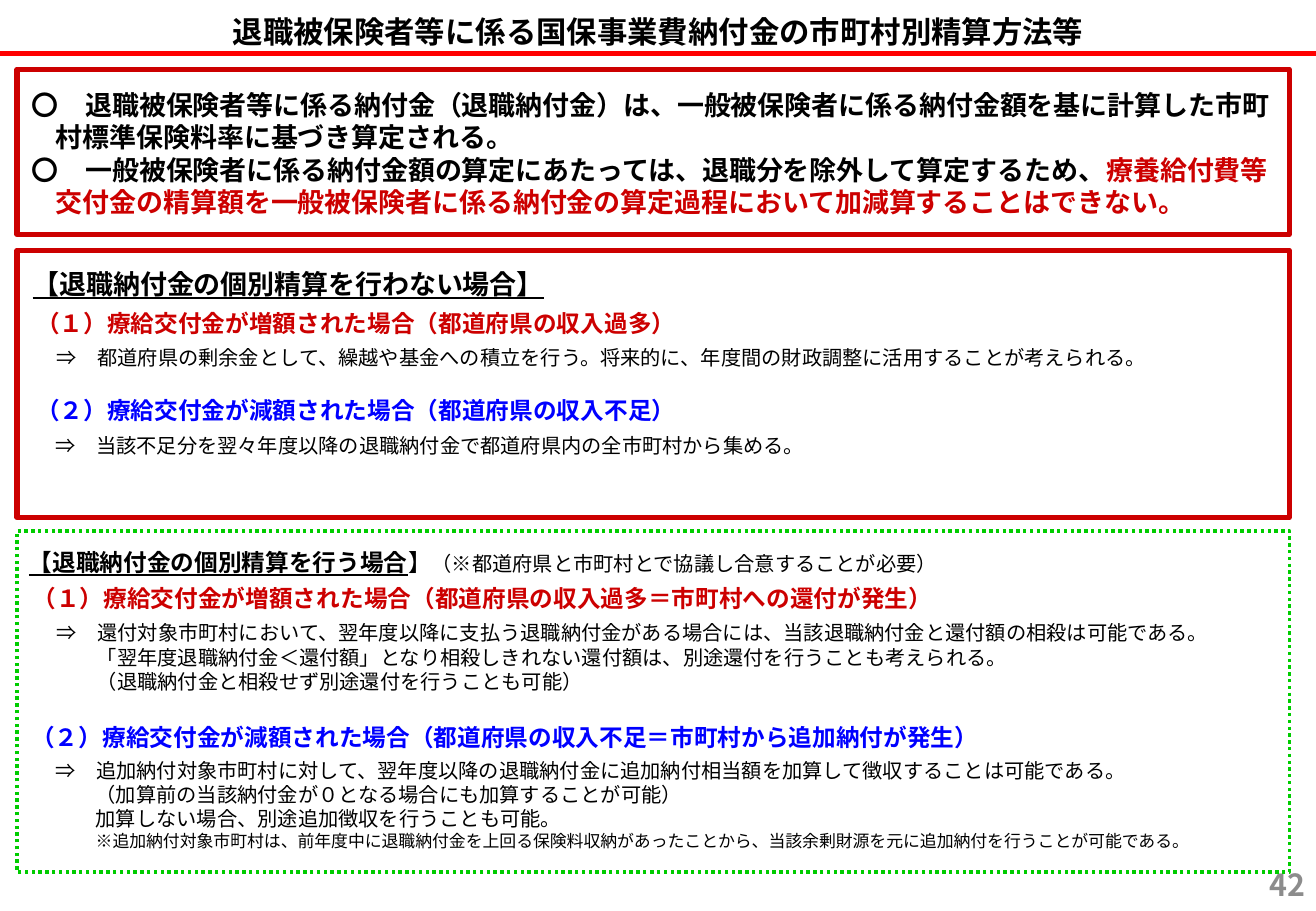
from dataclasses import dataclass

from lxml.etree import SubElement
from pptx import Presentation
from pptx.dml.color import RGBColor
from pptx.enum.dml import MSO_LINE
from pptx.enum.lang import MSO_LANGUAGE_ID as Language
from pptx.enum.shapes import MSO_CONNECTOR, MSO_SHAPE
from pptx.enum.text import MSO_ANCHOR as Anchor, MSO_AUTO_SIZE, PP_ALIGN as Align
from pptx.oxml.ns import qn
from pptx.util import Inches, Pt


@dataclass(frozen=True)
class Theme:
    font: str = "Noto Sans CJK JP"
    black: str = "000000"
    crimson: str = "CC0000"
    blue: str = "0000FF"
    green: str = "00CC00"
    red: str = "FF0000"
    gray: str = "8C8C8C"
    title: int = 18
    lead: int = 16
    heading: int = 14
    body: int = 12
    note: int = 10


THEME = Theme()
RED_HEAD = dict(size=THEME.heading, color=THEME.crimson, bold=True)
BLUE_HEAD = dict(size=THEME.heading, color=THEME.blue, bold=True)

# A paragraph is a list of (text, format) runs.
TITLE = [[("退職被保険者等に係る国保事業費納付金の市町村別精算方法等", dict(size=THEME.title, bold=True))]]
PAGE_NUMBER = [[("42", dict(size=THEME.title, color=THEME.gray, bold=True))]]

LEAD = [
    [("〇　退職被保険者等に係る納付金（退職納付金）は、一般被保険者に係る納付金額を基に計算した"
      "市町村標準保険料率に基づき算定される。", dict(size=THEME.lead, bold=True))],
    [("〇　一般被保険者に係る納付金額の算定にあたっては、退職分を除外して算定するため、",
      dict(size=THEME.lead, bold=True)),
     ("療養給付費等交付金の精算額を一般被保険者に係る納付金の算定過程において加減算することはできない。",
      dict(size=THEME.lead, bold=True, color=THEME.crimson))],
]

# (left, top, width, height), paragraphs
HEADINGS = [
    ((0.17, 2.15, 10.36, 0.37),
     [[("【退職納付金の個別精算を行わない場合】", dict(size=THEME.lead, bold=True, underline=True))]]),
    ((0.2, 2.49, 9.71, 0.34), [[("（１）療給交付金が増額された場合（都道府県の収入過多）", RED_HEAD)]]),
    ((0.2, 3.21, 9.71, 0.34), [[("（２）療給交付金が減額された場合（都道府県の収入不足）", BLUE_HEAD)]]),
    ((0.14, 4.46, 10.36, 0.34),
     [[("【退職納付金の個別精算を行う場合", dict(size=THEME.heading, bold=True, underline=True)),
       ("】", dict(size=THEME.heading)),
       ("（※都道府県と市町村とで協議し合意することが必要）", {})]]),
    ((0.17, 4.76, 9.71, 0.34),
     [[("（１）療給交付金が増額された場合（都道府県の収入過多＝市町村への還付が発生）", RED_HEAD)]]),
    ((0.16, 5.9, 9.74, 0.34),
     [[("（２）療給交付金が減額された場合（都道府県の収入不足＝市町村から追加納付が発生）", BLUE_HEAD)]]),
]

# The first line hangs its arrow; the others align with the text after it.
EXPLANATIONS = [
    ((0.37, 2.79, 10.1, 0.3),
     [[("⇒　都道府県の剰余金として、繰越や基金への積立を行う。将来的に、年度間の財政調整に活用することが考えられる。", {})]]),
    ((0.36, 3.52, 10.17, 0.3),
     [[("⇒　当該不足分を翌々年度以降の退職納付金で都道府県内の全市町村から集める。", {})]]),
    ((0.37, 5.06, 10.27, 0.71),
     [[("⇒　還付対象市町村において、翌年度以降に支払う退職納付金がある場合には、"
        "当該退職納付金と還付額の相殺は可能である。", {})],
      [("「翌年度退職納付金＜還付額」となり相殺しきれない還付額は、別途還付を行うことも考えられる。", {})],
      [("（退職納付金と相殺せず別途還付を行うことも可能）", {})]]),
    ((0.36, 6.19, 10.17, 0.91),
     [[("⇒　追加納付対象市町村に対して、翌年度以降の退職納付金に追加納付相当額を加算して徴収することは可能である。", {})],
      [("（加算前の当該納付金が０となる場合にも加算することが可能）", {})],
      [("加算しない場合、別途追加徴収を行うことも可能。", {})],
      [("※追加納付対象市町村は、前年度中に退職納付金を上回る保険料収納があったことから、"
        "当該余剰財源を元に追加納付を行うことが可能である。", dict(size=THEME.note))]]),
]

PANEL_LEFT, PANEL_WIDTH = 0.14, 10.47
LEAD_HANG, ARROW_HANG = 0.2, 0.33


def rgb(color):
    return RGBColor.from_string(color)


def add_run(paragraph, text, *, size=THEME.body, color=THEME.black, bold=False, underline=False):
    run = paragraph.add_run()
    run.text = text
    font = run.font
    font.size, font.bold, font.underline = Pt(size), bold, underline
    font.color.rgb = rgb(color)
    font.name = THEME.font
    font.language_id = Language.JAPANESE
    east_asian = SubElement(font._element, qn("a:ea"))
    east_asian.set("typeface", THEME.font)


def write(frame, paragraphs, *, align=Align.LEFT, anchor=Anchor.TOP, hang=0, hang_mark="",
          insets=(0.1, 0.05, 0.1, 0.05)):
    """Fill a text frame; with hang, lines that start with hang_mark get a hanging indent."""
    frame.word_wrap = True
    frame.auto_size = MSO_AUTO_SIZE.NONE
    frame.vertical_anchor = anchor
    frame.margin_left, frame.margin_top, frame.margin_right, frame.margin_bottom = map(Inches, insets)
    for index, runs in enumerate(paragraphs):
        paragraph = frame.add_paragraph() if index else frame.paragraphs[0]
        paragraph.alignment = align
        if hang:
            properties = paragraph._p.get_or_add_pPr()
            properties.set("marL", str(Inches(hang)))
            if runs[0][0].startswith(hang_mark):
                properties.set("indent", str(-Inches(hang)))
        for text, style in runs:
            add_run(paragraph, text, **style)


def add_text(slide, box, paragraphs, **layout):
    write(slide.shapes.add_textbox(*map(Inches, box)).text_frame, paragraphs, **layout)


def add_panel(slide, top, height, color, weight, dash=None):
    panel = slide.shapes.add_shape(
        MSO_SHAPE.RECTANGLE, *map(Inches, (PANEL_LEFT, top, PANEL_WIDTH, height)))
    panel.shadow.inherit = False
    panel.fill.background()
    panel.line.color.rgb = rgb(color)
    panel.line.width = Pt(weight)
    if dash:
        panel.line.dash_style = dash
    return panel


def add_title(slide):
    title = slide.shapes.title
    title.left, title.top, title.width, title.height = map(Inches, (0, -0.04, 10.83, 0.6))
    write(title.text_frame, TITLE, align=Align.CENTER, anchor=Anchor.MIDDLE)
    rule = slide.shapes.add_connector(
        MSO_CONNECTOR.STRAIGHT, *map(Inches, (-0.05, 0.44, 10.83, 0.44)))
    rule.line.color.rgb = rgb(THEME.red)
    rule.line.width = Pt(3)
    SubElement(rule._element.spPr, qn("a:effectLst"))


def main():
    deck = Presentation()
    deck.slide_width, deck.slide_height = Inches(10.83), Inches(7.5)
    slide = deck.slides.add_slide(deck.slide_layouts[5])

    add_text(slide, (8.31, 7.08, 2.53, 0.4), PAGE_NUMBER, align=Align.RIGHT, anchor=Anchor.MIDDLE)
    add_title(slide)
    add_panel(slide, 2.06, 2.2, THEME.crimson, 3)
    add_panel(slide, 4.37, 2.81, THEME.green, 2, MSO_LINE.ROUND_DOT)
    for box, heading in HEADINGS:
        add_text(slide, box, heading)
    for box, explanation in EXPLANATIONS:
        add_text(slide, box, explanation, hang=ARROW_HANG, hang_mark="⇒")
    lead_panel = add_panel(slide, 0.57, 1.36, THEME.crimson, 3)
    write(lead_panel.text_frame, LEAD, hang=LEAD_HANG, hang_mark="〇",
          insets=(0.12, 0.16, 0.12, 0.12))

    deck.save("out.pptx")


if __name__ == "__main__":
    main()
